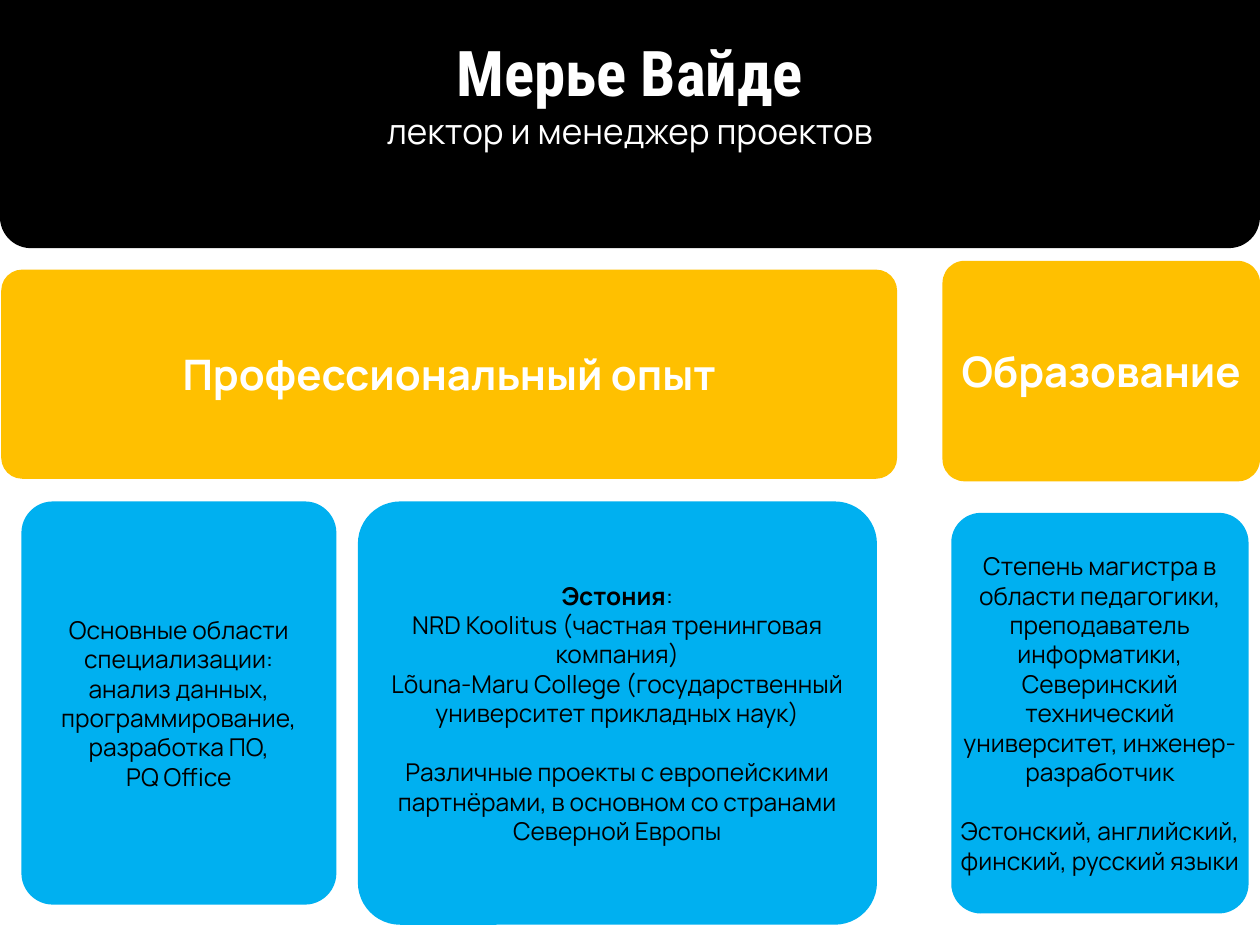
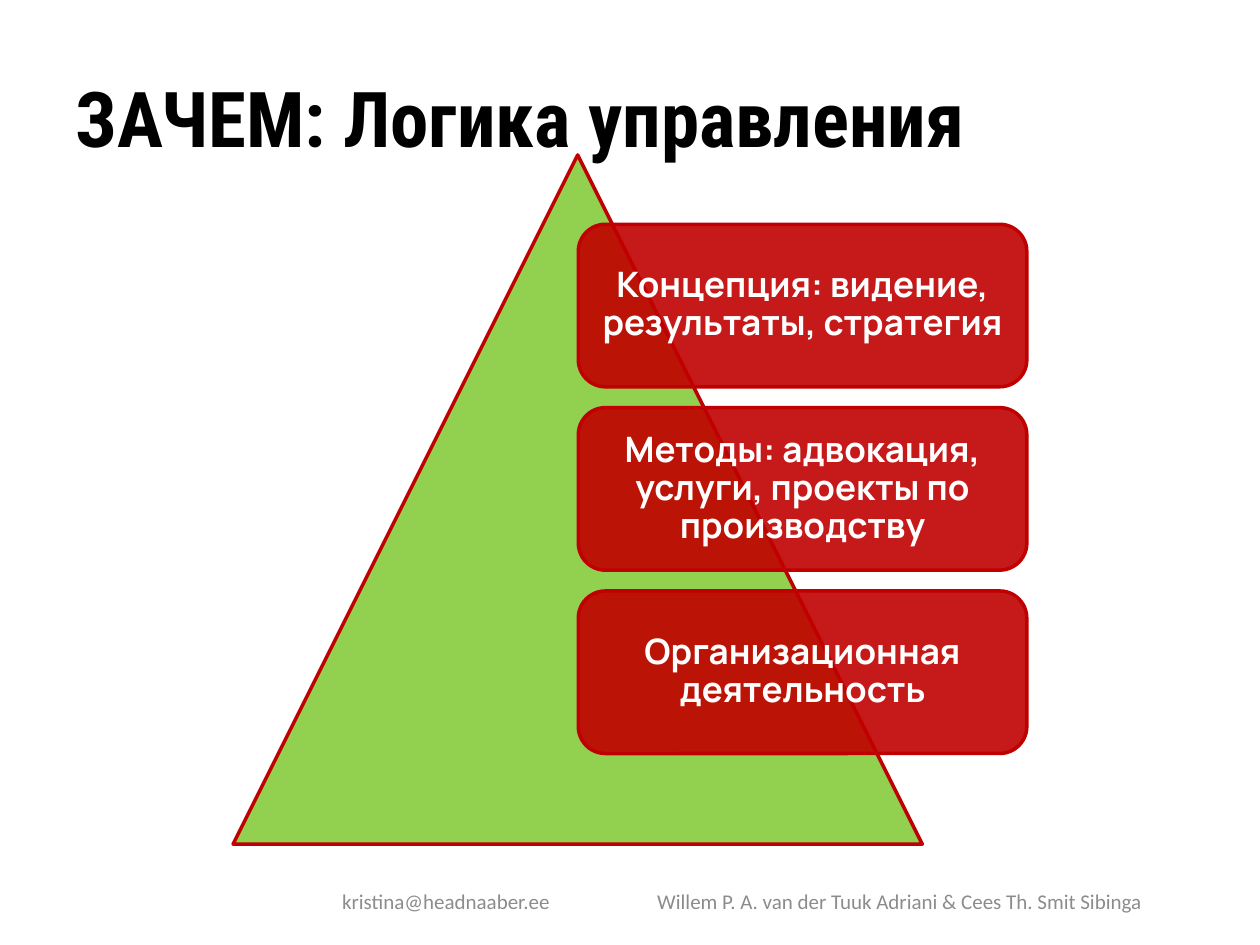
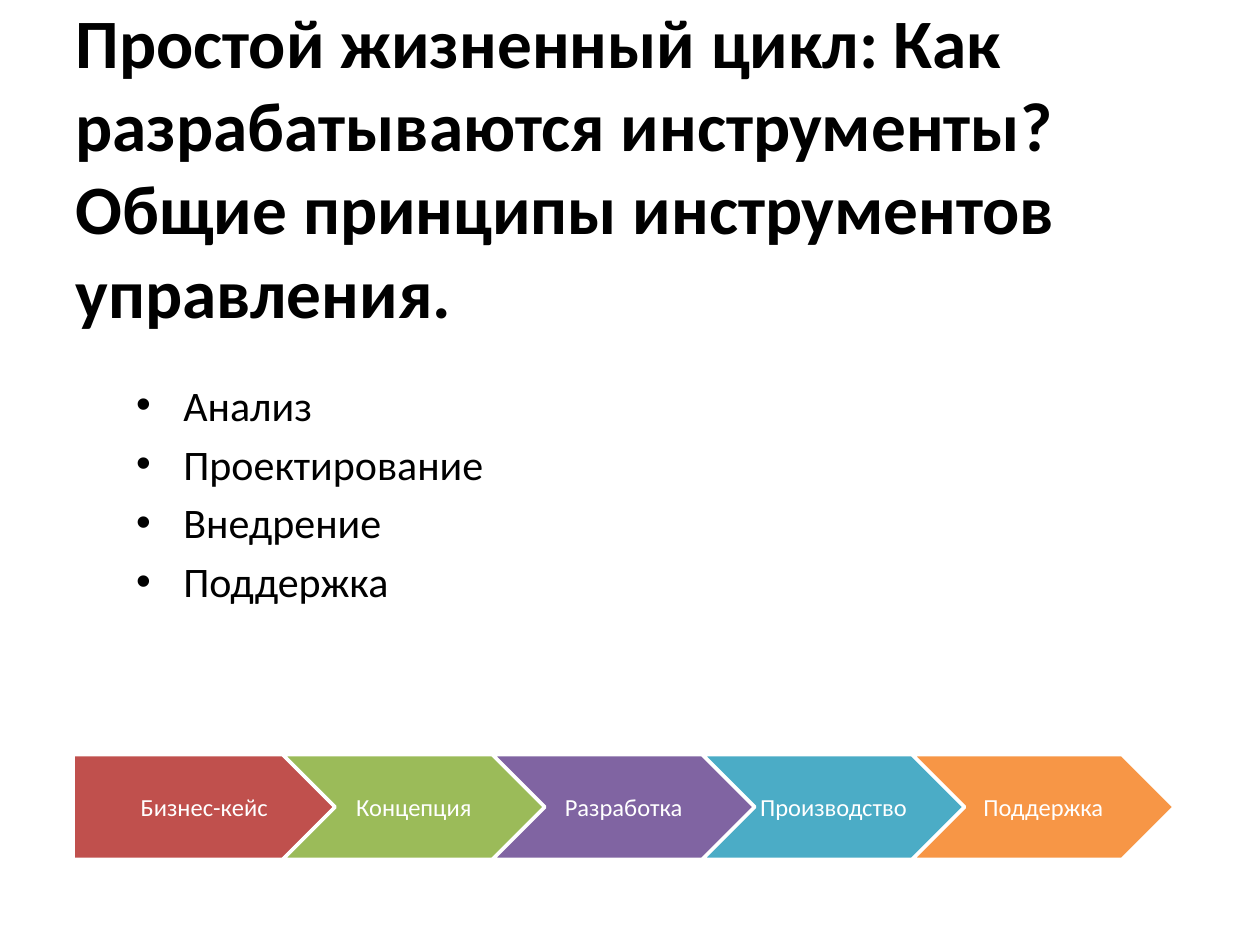
"""Build three slides: a lecturer profile, a management pyramid and a life cycle."""
from lxml import etree
from pptx import Presentation
from pptx.dml.color import RGBColor
from pptx.enum.shapes import MSO_SHAPE
from pptx.enum.text import MSO_ANCHOR, MSO_AUTO_SIZE, PP_ALIGN
from pptx.oxml.ns import qn
from pptx.util import Inches, Pt

ROUNDED = MSO_SHAPE.ROUNDED_RECTANGLE
TRIANGLE = MSO_SHAPE.ISOSCELES_TRIANGLE
PENTAGON = MSO_SHAPE.PENTAGON
CHEVRON = MSO_SHAPE.CHEVRON
LEFT, CENTER = PP_ALIGN.LEFT, PP_ALIGN.CENTER
MIDDLE = MSO_ANCHOR.MIDDLE
NO_FIT = MSO_AUTO_SIZE.NONE

TITLE_ONLY, TITLE_AND_CONTENT = 5, 1
HEAD_FONT, TEXT_FONT, PLAIN_FONT = "Roboto Condensed", "Manrope", "Calibri"
COLORS = {
    "black": "000000", "white": "FFFFFF", "gray": "8C8C8C",
    "amber": "FFC000", "sky": "00B0F0", "lime": "92D050", "crimson": "C00000",
    "red": "C0504D", "green": "9BBB59", "purple": "8064A2",
    "teal": "4BACC6", "orange": "F79646",
}


def rgb(name):
    """Return a palette colour."""
    return RGBColor.from_string(COLORS[name])


def place(sp, x, y, w, h):
    """Move and size a shape in inches."""
    sp.left, sp.top, sp.width, sp.height = (Inches(v) for v in (x, y, w, h))


def style(p, font, size, color, bold=False, align=CENTER):
    """Format one paragraph."""
    p.alignment = align
    p.font.name, p.font.size, p.font.bold = font, Pt(size), bold
    p.font.color.rgb = rgb(color)


def write(tf, lines, *look, **options):
    """Fill a text frame with equally styled paragraphs."""
    tf.word_wrap = True
    tf.auto_size = NO_FIT
    tf.vertical_anchor = MIDDLE
    tf.text = "\n".join(lines)
    for p in tf.paragraphs:
        style(p, *look, **options)


def add_title(s, lines, box, *look, **options):
    """Place and format the slide title."""
    title = s.shapes.title
    place(title, *box)
    write(title.text_frame, lines, *look, **options)
    return title


def add_block(s, kind, box, fill, line=None):
    """Add a flat preset shape without inner margins."""
    sp = s.shapes.add_shape(kind, *(Inches(v) for v in box))
    sp.shadow.inherit = False
    sp.fill.solid()
    sp.fill.fore_color.rgb = rgb(fill)
    if line:
        sp.line.color.rgb = rgb(line)
        sp.line.width = Pt(2)
    else:
        sp.line.fill.background()
    tf = sp.text_frame
    tf.margin_left = tf.margin_right = tf.margin_top = tf.margin_bottom = 0
    return sp


def add_card(s, box, fill, lines, size, color, bold=False):
    """Add a slightly rounded card and return its paragraphs."""
    sp = add_block(s, ROUNDED, box, fill)
    sp.adjustments[0] = 0.1
    write(sp.text_frame, lines, TEXT_FONT, size, color, bold)
    return sp.text_frame.paragraphs


def add_footer(s, text, x, w):
    """Add one gray footer entry."""
    tb = s.shapes.add_textbox(Inches(x), Inches(6.95), Inches(w), Inches(0.4))
    write(tb.text_frame, [text], PLAIN_FONT, 12, "gray")


def set_alpha(sp, percent):
    """Make a solid fill partly transparent."""
    clr = sp.element.spPr.find(qn("a:solidFill")).find(qn("a:srgbClr"))
    etree.SubElement(clr, qn("a:alpha")).set("val", str(percent * 1000))


def profile_slide(prs):
    """Add the lecturer's profile."""
    s = prs.slides.add_slide(prs.slide_layouts[TITLE_ONLY])
    band = (0, -0.5, 10, 2.47)
    add_block(s, ROUNDED, band, "black").adjustments[0] = 0.1
    title = add_title(s, ["Мерье Вайде", "лектор и менеджер проектов"], band,
                      HEAD_FONT, 36, "white", True)
    style(title.text_frame.paragraphs[1], TEXT_FONT, 20, "white")
    title.element.getparent().append(title.element)

    for heading, box in (("Профессиональный опыт", (0.01, 2.14, 7.11, 1.66)),
                         ("Образование", (7.48, 2.07, 2.52, 1.75))):
        add_card(s, box, "amber", [heading], 24, "white", True)

    add_card(s, (0.17, 3.98, 2.5, 3.2), "sky", [
        "Основные области специализации:",
        "анализ данных, программирование, разработка ПО,",
        "PQ Office",
    ], 14, "black")
    work = add_card(s, (2.84, 3.98, 4.12, 3.36), "sky", [
        "",
        "NRD Koolitus (частная тренинговая компания)",
        "Lõuna-Maru College (государственный университет прикладных наук)",
        "Различные проекты с европейскими партнёрами, "
        "в основном со странами Северной Европы",
    ], 14, "black")
    for text, bold in (("Эстония", True), (":", False)):
        r = work[0].add_run()
        r.text, r.font.bold = text, bold
    study = add_card(s, (7.55, 4.07, 2.36, 3.18), "sky", [
        "Степень магистра в области педагогики, преподаватель информатики,",
        "Северинский технический университет, инженер-разработчик",
        "Эстонский, английский, финский, русский языки",
    ], 14, "black")
    for p in (work[-1], study[-1]):
        p.space_before = Pt(17)


def pyramid_slide(prs):
    """Add the management pyramid with its three levels."""
    s = prs.slides.add_slide(prs.slide_layouts[TITLE_ONLY])
    add_title(s, ["ЗАЧЕМ: Логика управления"], (0.5, 0.3, 9, 1.25),
              HEAD_FONT, 44, "black", True, align=LEFT)
    add_footer(s, "kristina@headnaaber.ee", 2.24, 2.6)
    add_footer(s, "Willem P. A. van der Tuuk Adriani & Cees Th. Smit Sibinga",
               4.9, 4.48)
    add_block(s, TRIANGLE, (1.85, 1.23, 5.47, 5.47), "lime", "crimson")
    levels = ("Концепция: видение, результаты, стратегия",
              "Методы: адвокация, услуги, проекты по производству",
              "Организационная деятельность")
    for i, level in enumerate(levels):
        box = (4.59, 1.78 + 1.455 * i, 3.56, 1.29)
        sp = add_block(s, ROUNDED, box, "crimson", "crimson")
        set_alpha(sp, 90)
        write(sp.text_frame, [level], TEXT_FONT, 20, "white", True)
        sp.text_frame.paragraphs[0].line_spacing = 0.9


def cycle_slide(prs):
    """Add the life cycle with its bullets and chain of stages."""
    s = prs.slides.add_slide(prs.slide_layouts[TITLE_AND_CONTENT])
    add_title(s, ["Простой жизненный цикл: Как разрабатываются инструменты? "
                  "Общие принципы инструментов управления."],
              (0.5, 0.3, 9, 2.03), PLAIN_FONT, 39.6, "black", True, align=LEFT)
    body = s.placeholders[1]
    place(body, 0.98, 2.96, 7.13, 2.53)
    write(body.text_frame,
          ["Анализ", "Проектирование", "Внедрение", "Поддержка"],
          PLAIN_FONT, 24, "black", align=LEFT)
    body.text_frame.vertical_anchor = MSO_ANCHOR.TOP

    stages = (("Бизнес-кейс", "red"), ("Концепция", "green"),
              ("Разработка", "purple"), ("Производство", "teal"),
              ("Поддержка", "orange"))
    for i, (stage, color) in enumerate(stages):
        box = (0.58 + 1.665 * i, 5.99, 2.08, 0.83)
        sp = add_block(s, CHEVRON if i else PENTAGON, box, color, "white")
        write(sp.text_frame, [stage], PLAIN_FONT, 14, "white")
        if i == 0:
            sp.text_frame.margin_left = Inches(0.21)


def main():
    """Build and save the presentation."""
    prs = Presentation()
    prs.slide_width, prs.slide_height = Inches(10), Inches(7.5)
    profile_slide(prs)
    pyramid_slide(prs)
    cycle_slide(prs)
    prs.save("out.pptx")


if __name__ == "__main__":
    main()
